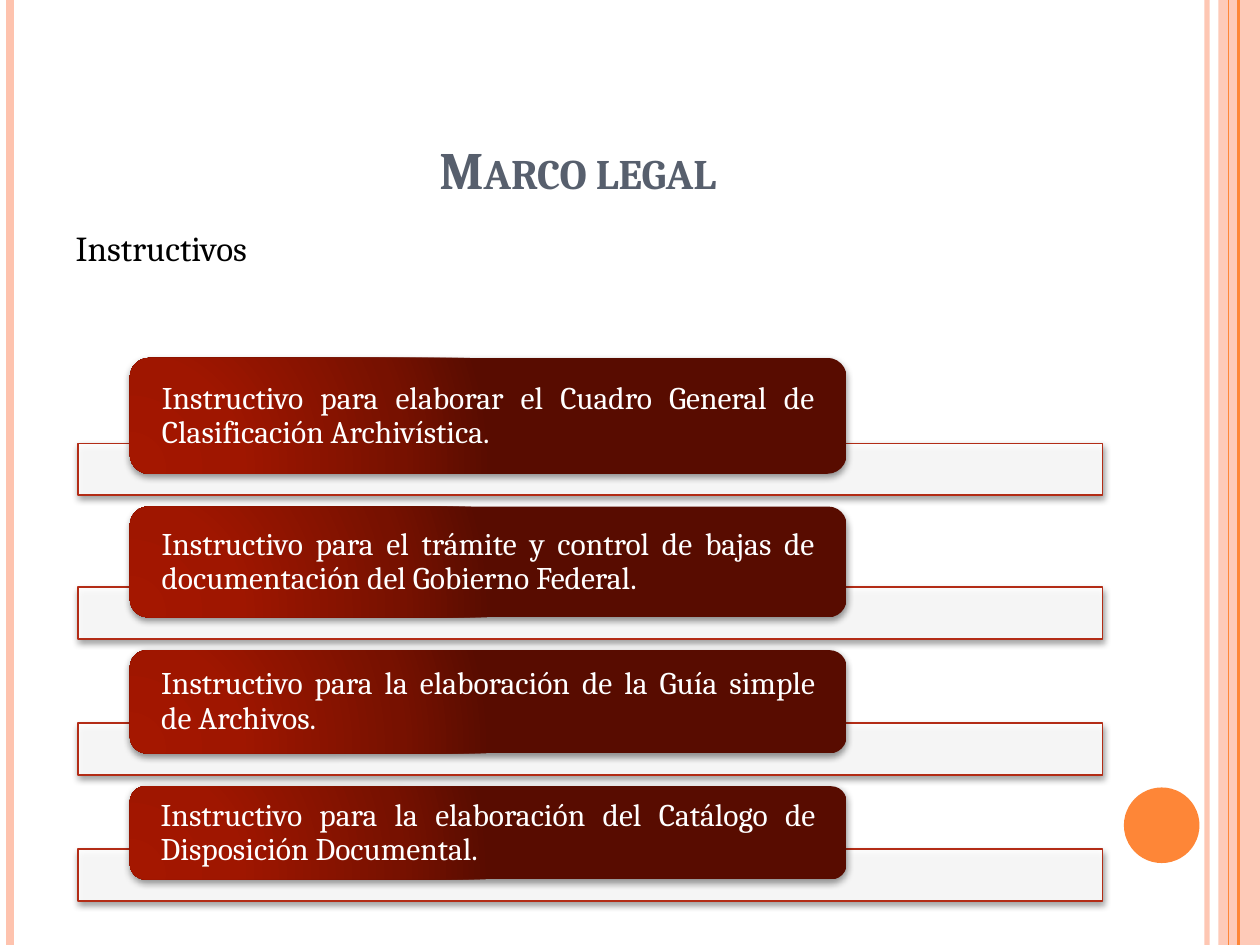
from lxml.etree import SubElement
from pptx import Presentation
from pptx.dml.color import RGBColor
from pptx.enum.shapes import MSO_CONNECTOR as Connector, MSO_SHAPE as Shape
from pptx.enum.text import MSO_ANCHOR as Anchor, MSO_AUTO_SIZE as AutoSize, PP_ALIGN as Align
from pptx.oxml.ns import qn
from pptx.util import Inches, Pt

COLORS = {
    "peach": "FEC3AE", "orange": "FE8637", "slate": "575F6D", "black": "000000",
    "white": "FFFFFF", "brick": "B32C16",
}
TAB_GRADIENT = [(0, "A41700"), (30, "9F1600"), (75, "771100"), (100, "580C00")]
FONT = "Cambria"
RULES = [
    (9.58, "peach", 3, 93), (0.08, "peach", 4.5, 100),
    (9.83, "orange", 1.5, 100), (9.75, "orange", 0.75, 100),
]
INSTRUCTIONS = [
    ("Instructivo para elaborar el Cuadro General de Clasificación Archivística.", 0.92),
    ("Instructivo para el trámite y control de bajas de documentación del Gobierno Federal.", 0.88),
    ("Instructivo para la elaboración de la Guía simple de Archivos.", 0.82),
    ("Instructivo para la elaboración del Catálogo de Disposición Documental.", 0.74),
]
LIST_TOP = 2.84
BAR_HEIGHT = 0.41
BAR_OVERLAP = 0.24
ROW_GAP = 0.09


def rgb(name):
    """Return the named colour."""
    return RGBColor.from_string(COLORS[name])


def set_alpha(parent, percent):
    """Give the first colour below the parent an opacity."""
    color = next(parent.iter(qn("a:srgbClr")))
    SubElement(color, qn("a:alpha"), val=str(percent * 1000))


def place(shape, left, top, width, height):
    """Move and size a shape in inches."""
    shape.left, shape.top = Inches(left), Inches(top)
    shape.width, shape.height = Inches(width), Inches(height)


def add_rule(slide, x, color, weight, opacity):
    """Draw a vertical line over the full slide height."""
    rule = slide.shapes.add_connector(
        Connector.STRAIGHT, Inches(x), Inches(0), Inches(x), Inches(7.5))
    rule.line.color.rgb = rgb(color)
    rule.line.width = Pt(weight)
    if opacity < 100:
        set_alpha(rule.line._ln, opacity)
    SubElement(rule._element.spPr, qn("a:effectLst"))


def add_block(slide, kind, box, fill, opacity=100):
    """Add a plain filled shape without line or shadow."""
    block = slide.shapes.add_shape(kind, *map(Inches, box))
    block.fill.solid()
    block.fill.fore_color.rgb = rgb(fill)
    if opacity < 100:
        set_alpha(block._element.spPr, opacity)
    block.line.fill.background()
    block.shadow.inherit = False
    return block


def add_shadow(shape):
    """Give a shape a soft shadow straight below it."""
    effects = shape._element.spPr.find(qn("a:effectLst"))
    shadow = SubElement(effects, qn("a:outerShdw"), blurRad=str(Pt(4)),
                        dist=str(Pt(1.6)), dir="5400000", rotWithShape="0")
    SubElement(shadow, qn("a:srgbClr"), val=COLORS["black"])
    set_alpha(shadow, 42)


def set_tab_gradient(shape):
    """Replace the solid fill by the circular red gradient."""
    properties = shape._element.spPr
    solid = properties.find(qn("a:solidFill"))
    gradient = properties.makeelement(qn("a:gradFill"), {"rotWithShape": "1"})
    stops = SubElement(gradient, qn("a:gsLst"))
    for position, color in TAB_GRADIENT:
        stop = SubElement(stops, qn("a:gs"), pos=str(position * 1000))
        SubElement(stop, qn("a:srgbClr"), val=color)
    circle = SubElement(gradient, qn("a:path"), {"path": "circle"})
    SubElement(circle, qn("a:fillToRect"), l="5000", t="100000", r="120000", b="10000")
    properties.replace(solid, gradient)


def write(paragraph, text, size, color, align, bold=False):
    """Add one formatted run to a paragraph."""
    paragraph.alignment = align
    run = paragraph.add_run()
    run.text = text
    run.font.name = FONT
    run.font.size = Pt(size)
    run.font.bold = bold
    run.font.color.rgb = rgb(color)
    return run


def fill_title(title):
    """Write the small-caps title."""
    place(title, 0.5, 0.3, 8.17, 1.34)
    title.text_frame.vertical_anchor = Anchor.BOTTOM
    title.text_frame.auto_size = AutoSize.NONE
    run = write(title.text_frame.paragraphs[0], "Marco legal", 30, "slate", Align.CENTER, True)
    run.font._element.set("cap", "small")


def fill_body(body):
    """Write the heading of the list without a bullet."""
    place(body, 0.5, 1.75, 8.33, 5.33)
    body.text_frame.auto_size = AutoSize.NONE
    paragraph = body.text_frame.paragraphs[0]
    paragraph.space_before = Pt(6)
    properties = paragraph._p.get_or_add_pPr()
    properties.set("marL", str(Inches(0.3)))
    properties.set("indent", str(Inches(-0.3)))
    SubElement(properties, qn("a:buNone"))
    write(paragraph, "Instructivos", 20, "black", Align.JUSTIFY)


def add_instruction(slide, text, top, height):
    """Add a bar with a labelled tab over it and return the bar's bottom."""
    bar_top = top + height - BAR_OVERLAP
    bar = add_block(slide, Shape.RECTANGLE, (0.62, bar_top, 8.13, BAR_HEIGHT), "white", 90)
    bar.line.color.rgb = rgb("brick")
    bar.line.width = Pt(1)
    add_shadow(bar)

    tab = add_block(slide, Shape.ROUNDED_RECTANGLE, (1.03, top, 5.69, height), "brick")
    set_tab_gradient(tab)
    add_shadow(tab)
    frame = tab.text_frame
    frame.word_wrap = True
    frame.vertical_anchor = Anchor.MIDDLE
    frame.margin_left = frame.margin_right = Inches(0.21)
    frame.margin_top = frame.margin_bottom = 0
    paragraph = frame.paragraphs[0]
    paragraph.line_spacing = 0.9
    write(paragraph, text, 18, "white", Align.JUSTIFY)
    return bar_top + BAR_HEIGHT


def main():
    """Build and save the slide."""
    presentation = Presentation()
    presentation.slide_width, presentation.slide_height = Inches(10), Inches(7.5)
    slide = presentation.slides.add_slide(presentation.slide_layouts[1])
    fill_title(slide.shapes.title)
    fill_body(slide.placeholders[1])
    add_block(slide, Shape.RECTANGLE, (9.67, 0, 0.33, 7.5), "peach", 87)
    for rule in RULES:
        add_rule(slide, *rule)
    add_block(slide, Shape.OVAL, (8.92, 6.25, 0.6, 0.6), "orange")
    top = LIST_TOP
    for text, height in INSTRUCTIONS:
        top = add_instruction(slide, text, top, height) + ROW_GAP
    presentation.save("out.pptx")


if __name__ == "__main__":
    main()
